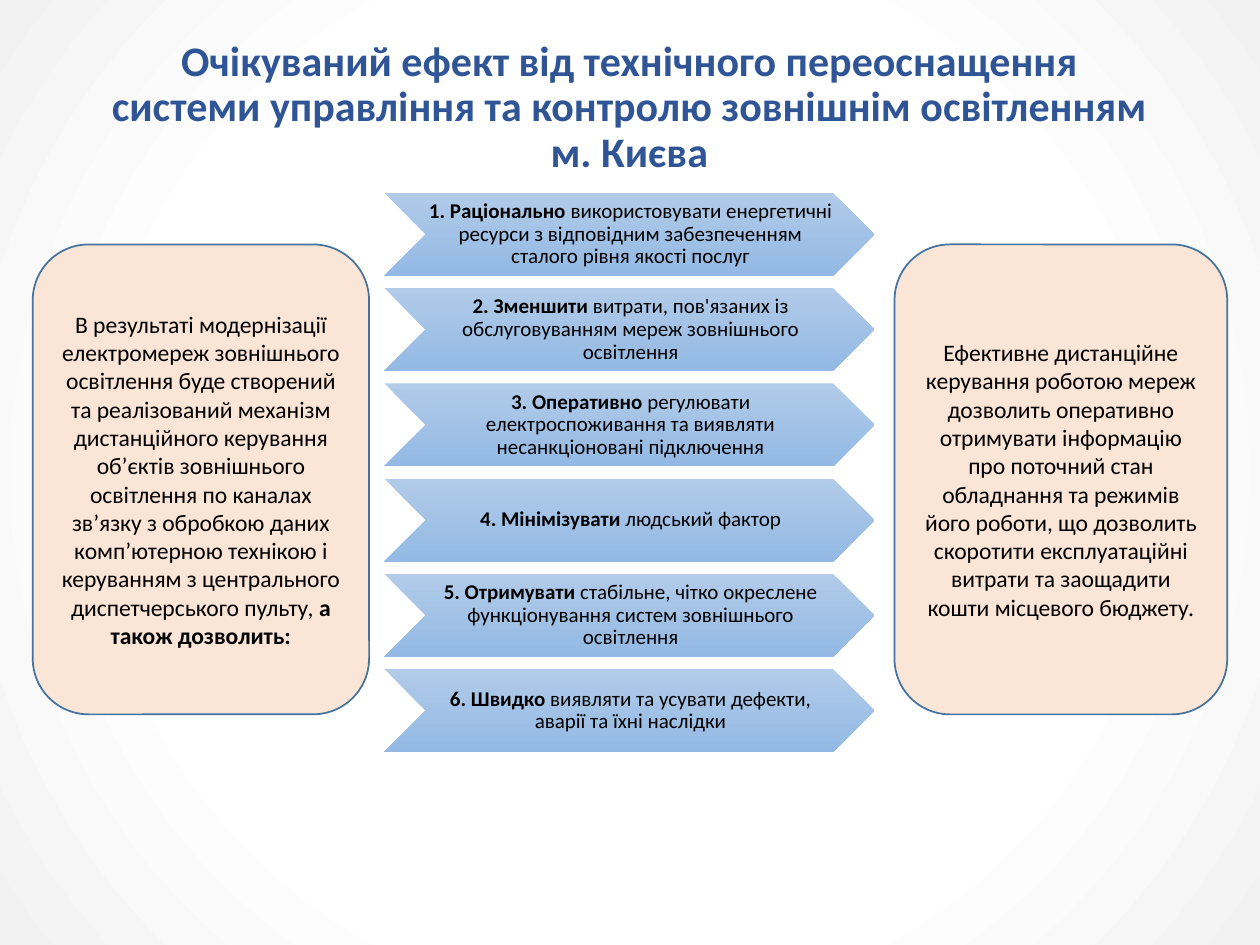
from lxml import etree
from pptx import Presentation
from pptx.dml.color import RGBColor
from pptx.enum import shapes, text
from pptx.oxml import ns
from pptx.util import Inches, Pt

FONT = "Calibri"
BLACK = RGBColor(0x00, 0x00, 0x00)
WHITE = RGBColor(0xFF, 0xFF, 0xFF)
PALE_GREY = RGBColor(0xF2, 0xF2, 0xF2)
TITLE_BLUE = RGBColor(0x2F, 0x55, 0x97)
PEACH = RGBColor(0xFB, 0xE5, 0xD6)
BORDER_BLUE = RGBColor(0x43, 0x73, 0x9E)
LIGHT_BLUE = RGBColor(0xB1, 0xCB, 0xE9)
MID_BLUE = RGBColor(0x93, 0xB9, 0xE4)

TITLE = ("Очікуваний ефект від технічного переоснащення системи "
         "управління та контролю зовнішнім освітленням м. Києва")
MODERNISATION = [
    ("В результаті модернізації електромереж зовнішнього освітлення буде "
     "створений та реалізований механізм дистанційного керування об’єктів "
     "зовнішнього освітлення по каналах зв’язку з обробкою даних комп’ютерною "
     "технікою і керуванням з центрального диспетчерського пульту, ", False),
    ("а також дозволить:", True),
]
REMOTE_CONTROL = [
    ("Ефективне дистанційне керування роботою мереж дозволить оперативно "
     "отримувати інформацію про поточний стан обладнання та режимів його "
     "роботи, що дозволить скоротити експлуатаційні витрати та заощадити "
     "кошти місцевого бюджету.", False),
]
EFFECTS = [
    ("1. Раціонально ", "використовувати енергетичні ресурси з відповідним "
     "забезпеченням сталого рівня якості послуг"),
    ("2. Зменшити", " витрати, пов'язаних із обслуговуванням мереж "
     "зовнішнього освітлення"),
    ("3. Оперативно ", "регулювати електроспоживання та виявляти "
     "несанкціоновані підключення"),
    ("4. Мінімізувати ", "людський фактор"),
    ("5. Отримувати ", "стабільне, чітко окреслене функціонування систем "
     "зовнішнього освітлення"),
    ("6. Швидко ", "виявляти та усувати дефекти, аварії та їхні наслідки"),
]
CHEVRON_TOP = 1.53
CHEVRON_BOTTOM = 5.97
CHEVRON_HEIGHT = 0.66
CHEVRON_PITCH = (CHEVRON_BOTTOM - CHEVRON_HEIGHT - CHEVRON_TOP) / (len(EFFECTS) - 1)


class EffectSlide:
    def __init__(self, slide):
        self.slide = slide

    def gradient(self, fill, *stops):
        fill.gradient()
        for stop, (position, colour) in zip(fill.gradient_stops, stops):
            stop.position = position
            stop.color.rgb = colour

    def background(self):
        """Fill the background white, greying radially towards the corners."""
        self.gradient(self.slide.background.fill, (0.63, WHITE), (1, PALE_GREY))
        linear = next(self.slide.element.iter(ns.qn("a:lin")))
        radial = etree.Element(ns.qn("a:path"), path="circle")
        etree.SubElement(radial, ns.qn("a:fillToRect"),
                         l="50000", t="50000", r="50000", b="50000")
        linear.getparent().replace(linear, radial)

    def add_text(self, frame, runs, size, colour=BLACK, spacing=None):
        frame.word_wrap = True
        frame.auto_size = text.MSO_AUTO_SIZE.NONE
        paragraph = frame.paragraphs[0]
        paragraph.alignment = text.PP_ALIGN.CENTER
        paragraph.line_spacing = spacing
        for words, bold in runs:
            run = paragraph.add_run()
            run.text = words
            run.font.name = FONT
            run.font.size = Pt(size)
            run.font.bold = bold
            run.font.color.rgb = colour

    def title(self, words):
        title = self.slide.shapes.title
        title.left, title.top = Inches(0.71), Inches(0.27)
        title.width, title.height = Inches(8.57), Inches(1.68)
        title.text_frame.vertical_anchor = text.MSO_ANCHOR.TOP
        self.add_text(title.text_frame, [(words, True)], 24, TITLE_BLUE, 0.9)

    def shape(self, kind, left, top, width, height):
        shape = self.slide.shapes.add_shape(
            kind, Inches(left), Inches(top), Inches(width), Inches(height))
        shape.shadow.inherit = False
        shape.text_frame.vertical_anchor = text.MSO_ANCHOR.MIDDLE
        return shape

    def chevron(self, top, lead, rest):
        chevron = self.shape(shapes.MSO_SHAPE.CHEVRON,
                             3.05, top, 3.89, CHEVRON_HEIGHT)
        self.gradient(chevron.fill, (0, LIGHT_BLUE), (1, MID_BLUE))
        chevron.fill.gradient_angle = 270
        chevron.line.fill.background()
        frame = chevron.text_frame
        frame.margin_left, frame.margin_right = Inches(0.02), 0
        frame.margin_top = frame.margin_bottom = Inches(0.01)
        self.add_text(frame, [(lead, True), (rest, False)], 12, spacing=0.9)

    def panel(self, left, width, runs):
        panel = self.shape(shapes.MSO_SHAPE.ROUNDED_RECTANGLE,
                           left, 1.94, width, 3.73)
        panel.fill.solid()
        panel.fill.fore_color.rgb = PEACH
        panel.line.color.rgb = BORDER_BLUE
        panel.line.width = Pt(1)
        self.add_text(panel.text_frame, runs, 13.5)


def main():
    deck = Presentation()
    deck.slide_width, deck.slide_height = Inches(10), Inches(7.5)
    title_only = deck.slide_layouts[5]
    page = EffectSlide(deck.slides.add_slide(title_only))
    page.background()
    page.title(TITLE)
    for row, (lead, rest) in enumerate(EFFECTS):
        page.chevron(CHEVRON_TOP + row * CHEVRON_PITCH, lead, rest)
    page.panel(0.26, 2.67, MODERNISATION)
    page.panel(7.1, 2.64, REMOTE_CONTROL)
    deck.save("out.pptx")


if __name__ == "__main__":
    main()
